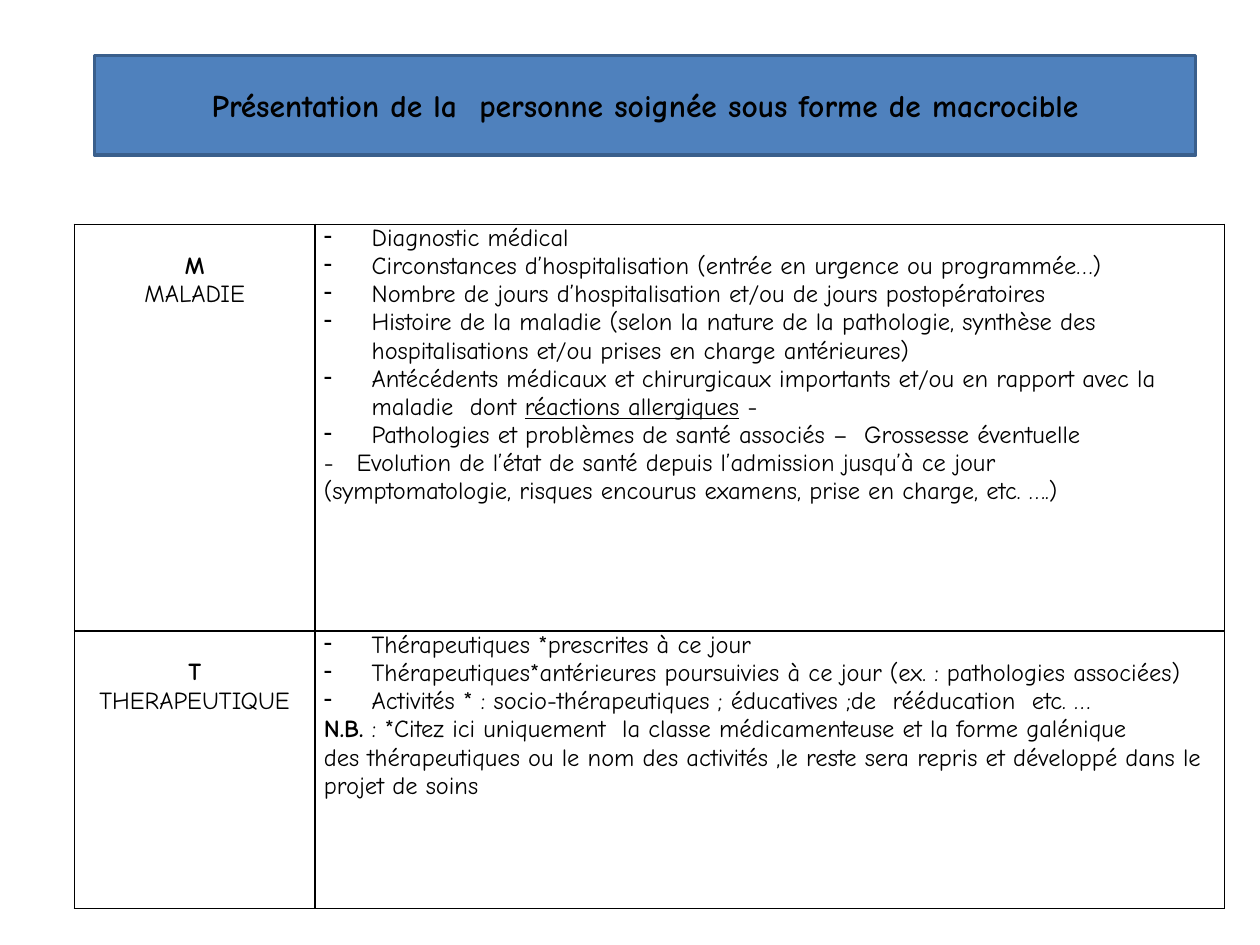
from dataclasses import dataclass

from lxml import etree
from pptx import Presentation
from pptx.dml.color import RGBColor
from pptx.enum.text import MSO_ANCHOR, PP_ALIGN
from pptx.oxml.ns import qn
from pptx.slide import Slide
from pptx.util import Inches, Pt

CENTER, LEFT = PP_ALIGN.CENTER, PP_ALIGN.LEFT
MIDDLE, TOP = MSO_ANCHOR.MIDDLE, MSO_ANCHOR.TOP


@dataclass
class Theme:
    font: str = "Comic Neue"
    title_size: int = 18
    body_size: int = 14
    ink: str = "000000"
    banner: str = "4F81BD"
    banner_line: str = "3A5F8C"
    border_width: int = 1
    hanging: float = 0.38
    dash_tab: float = 0.26
    label_drop: float = 0.22  # one line of body text


BOLD = {"bold": True}
UNDERLINE = {"underline": True}

# Each paragraph is (kind, runs); each run is (text, format)
ROWS = [
    (3.23, "M", "MALADIE", [
        ("bullet", [("Diagnostic médical", {})]),
        ("bullet", [("Circonstances d’hospitalisation (entrée en urgence ou programmée…)", {})]),
        ("bullet", [("Nombre de jours d’hospitalisation et/ou de jours postopératoires", {})]),
        ("bullet", [("Histoire de la maladie (selon la nature de la pathologie, synthèse des "
                     "hospitalisations et/ou prises en charge antérieures)", {})]),
        ("bullet", [("Antécédents médicaux et chirurgicaux importants et/ou en rapport avec la "
                     "maladie  dont ", {}),
                    ("réactions allergiques", UNDERLINE), (" -", {})]),
        ("bullet", [("Pathologies et problèmes de santé associés –  Grossesse éventuelle", {})]),
        ("dash", [("-\tEvolution de l’état de santé depuis l’admission jusqu’à ce jour", {}),
                  ("\v(symptomatologie, risques encourus examens, prise en charge, etc. ….)", {})]),
    ]),
    (2.2, "T", "THERAPEUTIQUE", [
        ("bullet", [("Thérapeutiques *prescrites à ce jour", {})]),
        ("bullet", [("Thérapeutiques*antérieures poursuivies à ce jour "
                     "(ex. : pathologies associées)", {})]),
        ("bullet", [("Activités * : socio-thérapeutiques ; éducatives ;de  rééducation  etc. …", {})]),
        ("plain", [("N.B.", BOLD),
                   (" : *Citez ici uniquement  la classe médicamenteuse et la forme galénique", {})]),
        ("plain", [("des thérapeutiques ou le nom des activités ,le reste sera repris et "
                    "développé dans le projet de soins", {})]),
    ]),
]


@dataclass
class Builder:
    theme: Theme
    s: Slide

    def runs(self, p, runs, size, align=LEFT):
        p.alignment = align
        for text, fmt in runs:
            # A leading \v is a line break within the paragraph
            if text.startswith("\v"):
                p.add_line_break()
            r = p.add_run()
            r.text = text.lstrip("\v")
            style = {"name": self.theme.font, "size": Pt(size), "bold": False, **fmt}
            for name, value in style.items():
                setattr(r.font, name, value)
            r.font.color.rgb = RGBColor.from_string(self.theme.ink)

    def indent(self, p, kind):
        pPr = p._p.get_or_add_pPr()
        if kind == "bullet":
            hang = Inches(self.theme.hanging)
            pPr.set("marL", str(hang))
            pPr.set("indent", str(-hang))
            etree.SubElement(pPr, qn("a:buChar"), char="-")
        elif kind == "dash":
            tabs = etree.SubElement(pPr, qn("a:tabLst"))
            etree.SubElement(tabs, qn("a:tab"), pos=str(Inches(self.theme.dash_tab)), algn="l")

    def title(self, text, left, top, width, height):
        sp = self.s.shapes.title
        box = {"left": left, "top": top, "width": width, "height": height}
        for name, value in box.items():
            setattr(sp, name, Inches(value))
        sp.fill.solid()
        sp.fill.fore_color.rgb = RGBColor.from_string(self.theme.banner)
        sp.line.color.rgb = RGBColor.from_string(self.theme.banner_line)
        sp.line.width = Pt(2)
        tf = sp.text_frame
        tf.word_wrap = True
        tf.vertical_anchor = MIDDLE
        self.runs(tf.paragraphs[0], [(text, BOLD)], self.theme.title_size, CENTER)

    def borders(self, cell):
        tcPr = cell._tc.get_or_add_tcPr()
        for side in ("lnL", "lnR", "lnT", "lnB"):
            ln = etree.SubElement(tcPr, qn(f"a:{side}"), w=str(Pt(self.theme.border_width)))
            fill = etree.SubElement(ln, qn("a:solidFill"))
            etree.SubElement(fill, qn("a:srgbClr"), val=self.theme.ink)

    def cell(self, cell, paragraphs, align=LEFT, top=0):
        margins = {"margin_left": 0.07, "margin_right": 0.07,
                   "margin_top": top, "margin_bottom": 0}
        for name, value in margins.items():
            setattr(cell, name, Inches(value))
        cell.vertical_anchor = TOP
        self.borders(cell)
        cell.fill.background()
        tf = cell.text_frame
        for i, (kind, runs) in enumerate(paragraphs):
            p = tf.add_paragraph() if i else tf.paragraphs[0]
            self.runs(p, runs, self.theme.body_size, align)
            self.indent(p, kind)

    def table(self, rows, left, top, widths):
        height = sum(row[0] for row in rows)
        frame = self.s.shapes.add_table(len(rows), len(widths), Inches(left), Inches(top),
                                        Inches(sum(widths)), Inches(height))
        table = frame.table
        table.first_row = table.horz_banding = False
        for column, width in zip(table.columns, widths):
            column.width = Inches(width)
        for i, (row_height, letter, label, paragraphs) in enumerate(rows):
            table.rows[i].height = Inches(row_height)
            heading = [("plain", [(letter, BOLD)]), ("plain", [(label, {})])]
            self.cell(table.cell(i, 0), heading, CENTER, self.theme.label_drop)
            self.cell(table.cell(i, 1), paragraphs)


prs = Presentation()
prs.slide_width, prs.slide_height = Inches(10), Inches(7.5)
builder = Builder(Theme(), prs.slides.add_slide(prs.slide_layouts[5]))

# Title banner
builder.title("Présentation de la  personne soignée sous forme de macrocible",
              0.75, 0.44, 8.74, 0.79)

# Table of the macrocible headings
builder.table(ROWS, 0.59, 1.78, [1.91, 7.22])

prs.save("out.pptx")
